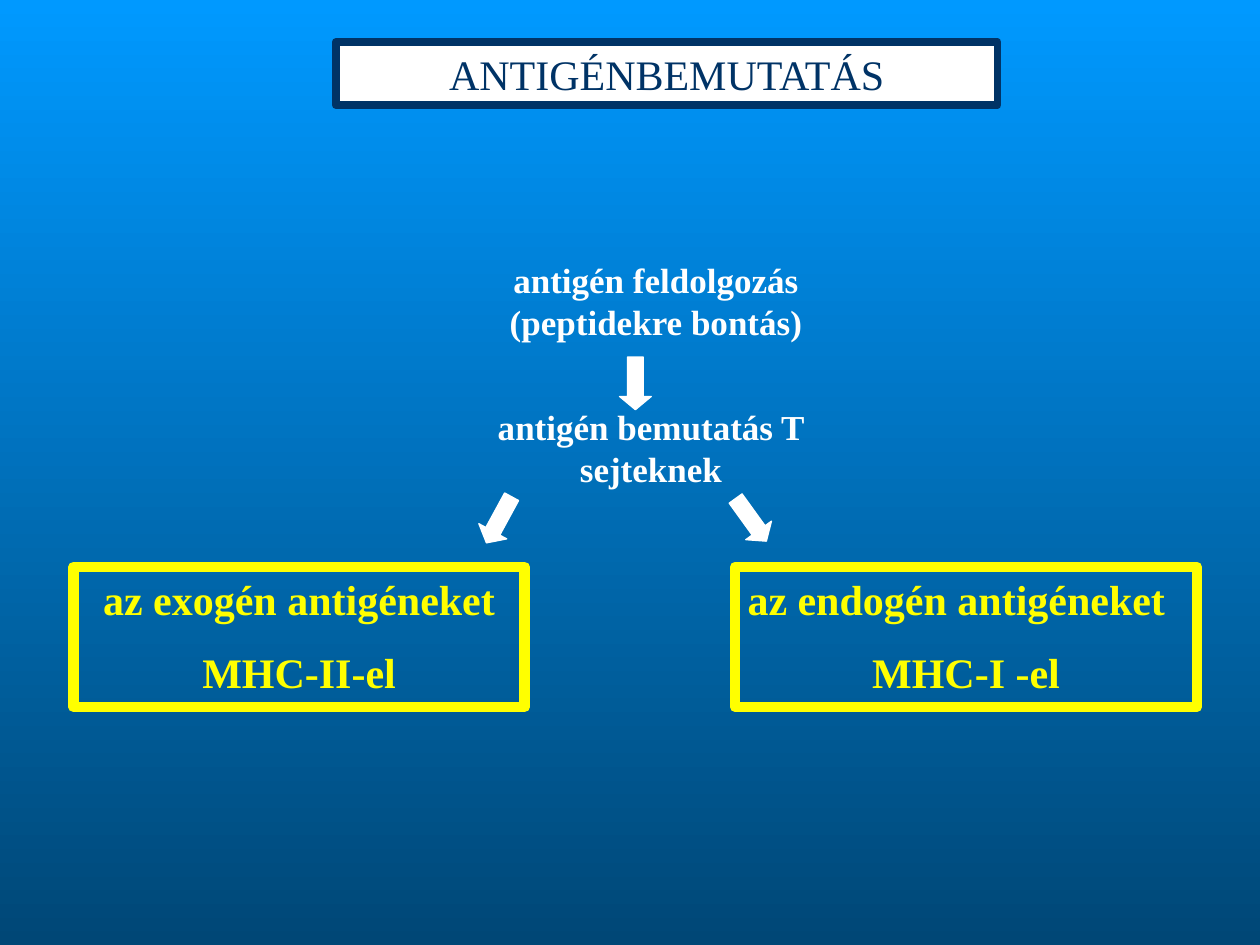
from pptx import Presentation
from pptx.dml.color import RGBColor
from pptx.enum.shapes import MSO_SHAPE
from pptx.enum.text import MSO_ANCHOR, PP_ALIGN
from pptx.util import Cm, Pt

FONT = "Times New Roman"
WHITE, NAVY, YELLOW = "FFFFFF", "003366", "FFFF00"
SKY, DEEP_BLUE = "0099FF", "004776"


def color(hex_value):
    return RGBColor.from_string(hex_value)


def write(shape, lines, size=24, ink=WHITE, bold=True,
          aligns=(PP_ALIGN.CENTER, PP_ALIGN.CENTER), gap=13):
    """Fill a shape with one paragraph per line, gap points apart."""
    frame = shape.text_frame
    frame.word_wrap = True
    frame.vertical_anchor = MSO_ANCHOR.TOP
    for index, (line, align) in enumerate(zip(lines, aligns)):
        para = frame.paragraphs[0] if index == 0 else frame.add_paragraph()
        para.alignment = align
        para.space_before = Pt(gap if index else 0)
        span = para.add_run()
        span.text = line
        span.font.name = FONT
        span.font.size = Pt(size)
        span.font.bold = bold
        span.font.color.rgb = color(ink)


def add_preset(page, kind, box, fill=None, line=WHITE, width=0.75):
    shape = page.shapes.add_shape(kind, *(Cm(length) for length in box))
    shape.shadow.inherit = False
    if fill:
        shape.fill.solid()
        shape.fill.fore_color.rgb = color(fill)
    else:
        shape.fill.background()
    shape.line.color.rgb = color(line)
    shape.line.width = Pt(width)
    return shape


def add_background(page):
    fill = page.background.fill
    fill.gradient()
    fill.gradient_angle = 270
    for stop, (position, shade) in zip(fill.gradient_stops, ((0, SKY), (1, DEEP_BLUE))):
        stop.position = position
        stop.color.rgb = color(shade)


def add_title(page, box):
    frame = add_preset(page, MSO_SHAPE.RECTANGLE, box, WHITE, NAVY, 4.5)
    write(frame, ["ANTIGÉNBEMUTATÁS"], ink=NAVY, bold=False)


def add_step(page, box, text):
    step = page.shapes.add_textbox(*(Cm(length) for length in box))
    write(step, [text], size=20)


def add_arrow(page, left, top, rotation=0):
    arrow = add_preset(page, MSO_SHAPE.DOWN_ARROW, (left, top, 0.64, 1.06), WHITE)
    arrow.adjustments[0] = 0.5
    arrow.adjustments[1] = 0.417
    arrow.rotation = rotation


def add_outcome(page, box, lines, first_align=PP_ALIGN.CENTER):
    frame = add_preset(page, MSO_SHAPE.RECTANGLE, box, line=YELLOW, width=6)
    write(frame, lines, ink=YELLOW, aligns=(first_align, PP_ALIGN.CENTER))


def main():
    deck = Presentation()
    deck.slide_width, deck.slide_height = Cm(25.4), Cm(19.05)
    page = deck.slides.add_slide(deck.slide_layouts[6])
    add_background(page)
    add_step(page, (9.31, 5.08, 7.83, 1.97), "antigén feldolgozás (peptidekre bontás)")
    add_step(page, (8.68, 8.04, 8.89, 1.97), "antigén bemutatás T sejteknek")
    add_arrow(page, 12.49, 7.2)
    add_arrow(page, 9.74, 9.95, 28.6)
    add_arrow(page, 14.82, 9.95, 324.2)
    add_outcome(page, (1.48, 11.43, 9.1, 2.82), ["az exogén antigéneket", "MHC-II-el"])
    add_outcome(page, (14.82, 11.43, 9.31, 2.82), ["az endogén antigéneket", "MHC-I -el"],
                first_align=PP_ALIGN.LEFT)
    add_title(page, (6.77, 0.85, 13.34, 1.27))
    deck.save("out.pptx")


if __name__ == "__main__":
    main()
